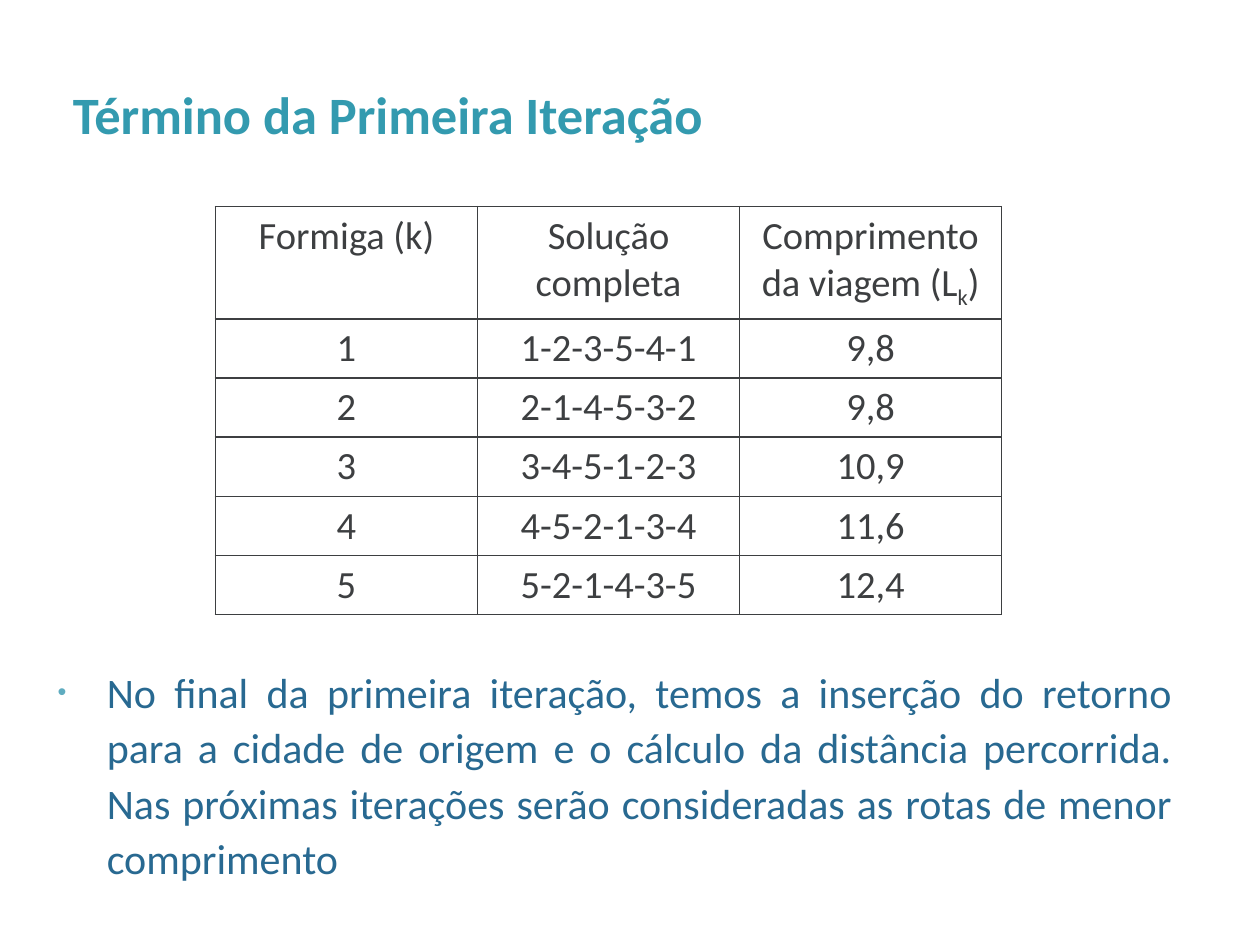
from typing import NamedTuple

from lxml import etree
from pptx import Presentation
from pptx.dml.color import RGBColor
from pptx.enum.text import MSO_ANCHOR, PP_ALIGN
from pptx.oxml.ns import qn
from pptx.util import Inches, Pt

CENTER, JUSTIFY = PP_ALIGN.CENTER, PP_ALIGN.JUSTIFY
TOP, MIDDLE = MSO_ANCHOR.TOP, MSO_ANCHOR.MIDDLE
TEAL, MINT, BLUE, GRAY = "339AAF", "5FACC0", "286991", "3D3F41"
HEAD, ROW, COL = 0.89, 0.47, 2.08


class Trip(NamedTuple):
    ant: str
    tour: str
    cost: str


TRIPS = [
    Trip("1", "1-2-3-5-4-1", "9,8"),
    Trip("2", "2-1-4-5-3-2", "9,8"),
    Trip("3", "3-4-5-1-2-3", "10,9"),
    Trip("4", "4-5-2-1-3-4", "11,6"),
    Trip("5", "5-2-1-4-3-5", "12,4"),
]
HEADS = Trip("Formiga (k)", "Solução completa", "Comprimento da viagem (L")
NOTE = ("No final da primeira iteração, temos a inserção do retorno para a "
        "cidade de origem e o cálculo da distância percorrida. Nas próximas "
        "iterações serão consideradas as rotas de menor comprimento")


def paint(font, size: float, color: str, bold: bool = False) -> None:
    look = {"name": "Calibri", "size": Pt(size), "bold": bold}
    for key, value in look.items():
        setattr(font, key, value)
    font.color.rgb = RGBColor.from_string(color)


def add_run(para, text: str, size: float, color: str, bold: bool = False):
    run = para.add_run()
    run.text = text
    paint(run.font, size, color, bold)
    return run


def add_box(slide, left: float, top: float, width: float, height: float,
            anchor):
    """Add a wrapped text box and return its first paragraph."""
    frame = slide.shapes.add_textbox(
        Inches(left), Inches(top), Inches(width), Inches(height)).text_frame
    frame.word_wrap = True
    frame.vertical_anchor = anchor
    return frame.paragraphs[0]


def add_bullet(para, color: str) -> None:
    props = para._p.get_or_add_pPr()
    props.set("marL", str(Inches(0.39)))
    props.set("indent", str(-Inches(0.39)))
    tint = etree.SubElement(props, qn("a:buClr"))
    etree.SubElement(tint, qn("a:srgbClr"), val=color)
    etree.SubElement(props, qn("a:buSzPct"), val="60000")
    etree.SubElement(props, qn("a:buFont"), typeface="Arial")
    etree.SubElement(props, qn("a:buChar"), char="•")


def add_edges(cell, color: str) -> None:
    props = cell._tc.get_or_add_tcPr()
    for spot, side in enumerate(("lnL", "lnR", "lnT", "lnB")):
        line = etree.Element(qn(f"a:{side}"), w=str(Pt(1)))
        fill = etree.SubElement(line, qn("a:solidFill"))
        etree.SubElement(fill, qn("a:srgbClr"), val=color)
        props.insert(spot, line)


def add_grid(slide, rows: list[Trip]):
    count = len(HEADS)
    grid = slide.shapes.add_table(
        len(rows), count, Inches(1.71), Inches(1.64), Inches(COL * count),
        Inches(HEAD + ROW * (len(rows) - 1))).table
    grid.first_row = grid.horz_banding = False
    for col in grid.columns:
        col.width = Inches(COL)
    for i, row in enumerate(rows):
        grid.rows[i].height = Inches(ROW if i else HEAD)
        for j, text in enumerate(row):
            cell = grid.cell(i, j)
            cell.fill.background()
            add_edges(cell, GRAY)
            para = cell.text_frame.paragraphs[0]
            para.alignment = CENTER
            add_run(para, text, 22, GRAY)
    return grid


def main() -> None:
    deck = Presentation()
    deck.slide_width, deck.slide_height = Inches(10), Inches(7.5)
    slide = deck.slides.add_slide(deck.slide_layouts[6])

    note = add_box(slide, 0.36, 5.2, 9.04, 1.9, TOP)
    note.alignment, note.line_spacing = JUSTIFY, 1.1
    add_bullet(note, MINT)
    add_run(note, NOTE, 24, BLUE)

    title = add_box(slide, 0.48, 0.55, 9.05, 0.77, MIDDLE)
    title.line_spacing = 0.9
    add_run(title, "Término da Primeira Iteração", 30, TEAL, True)

    grid = add_grid(slide, [HEADS, *TRIPS])
    label = grid.cell(0, 2).text_frame.paragraphs[0]
    sub = add_run(label, "k", 22, GRAY)
    sub.font._element.set("baseline", "-25000")
    add_run(label, ")", 22, GRAY)

    deck.save("out.pptx")


if __name__ == "__main__":
    main()
